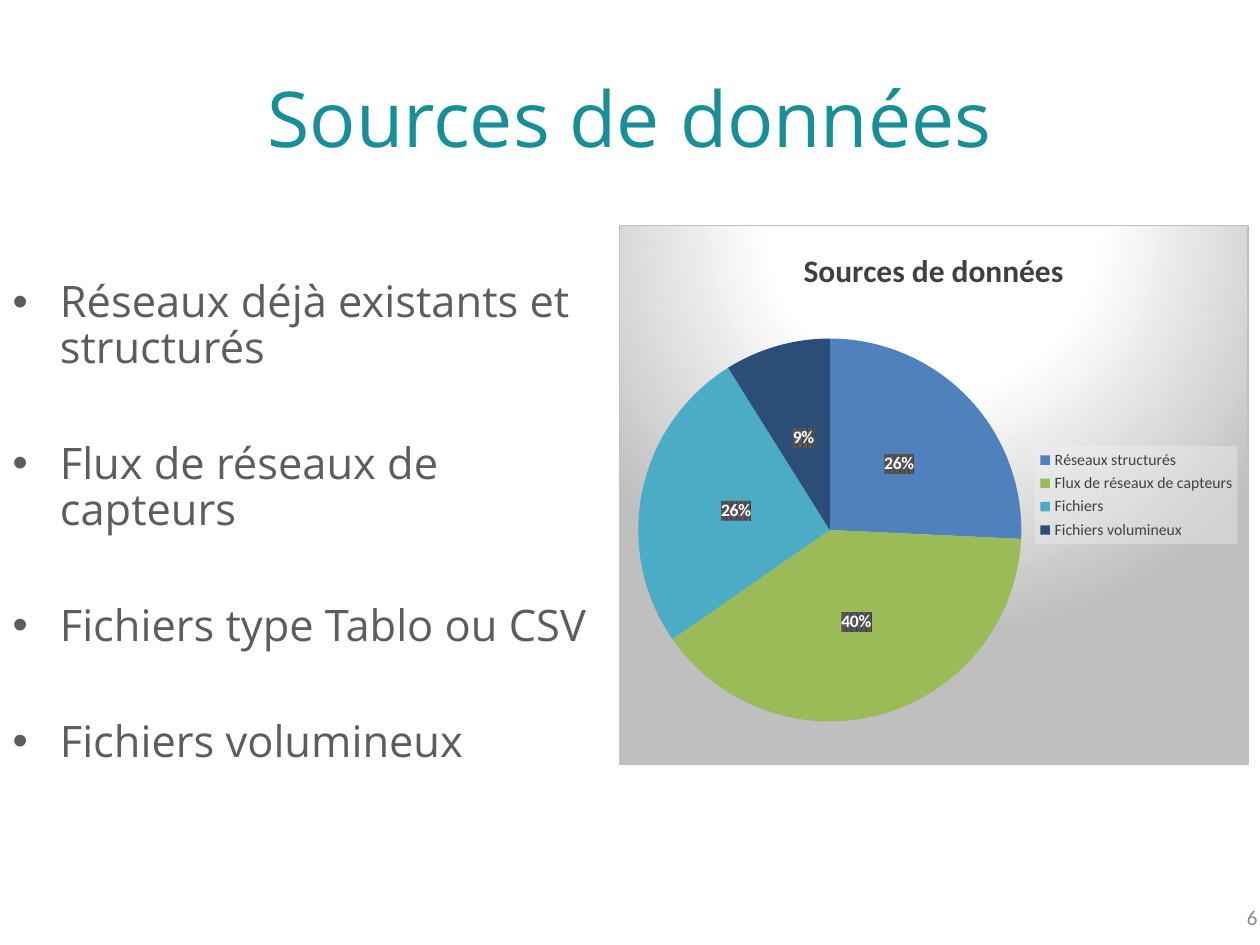
from lxml import etree
from pptx import Presentation
from pptx.chart.data import CategoryChartData
from pptx.dml.color import RGBColor
from pptx.enum.chart import XL_CHART_TYPE, XL_LABEL_POSITION, XL_LEGEND_POSITION
from pptx.enum.text import MSO_ANCHOR, MSO_AUTO_SIZE, PP_ALIGN
from pptx.oxml import parse_xml
from pptx.oxml.ns import nsdecls, qn
from pptx.util import Cm, Pt

PIE = XL_CHART_TYPE.PIE
LABEL_CENTER = XL_LABEL_POSITION.CENTER
LEGEND_RIGHT = XL_LEGEND_POSITION.RIGHT
MIDDLE = MSO_ANCHOR.MIDDLE
NO_FIT = MSO_AUTO_SIZE.NONE
CENTER, RIGHT = PP_ALIGN.CENTER, PP_ALIGN.RIGHT


def style(font, name, size, color, bold=False):
    font.name = name
    font.size = Pt(size)
    font.bold = bold
    font.color.rgb = RGBColor.from_string(color)


def add_area_format(chart_part, content):
    """Put fill and line properties just before the part's text properties."""
    area = parse_xml(f'<c:spPr {nsdecls("c", "a")}>{content}</c:spPr>')
    chart_part.find(qn("c:txPr")).addprevious(area)


prs = Presentation()
prs.slide_width, prs.slide_height = Cm(25.4), Cm(19.05)
slide = prs.slides.add_slide(prs.slide_layouts[1])
title, sources = slide.placeholders

# Title
title.left, title.top, title.width, title.height = Cm(1.27), Cm(0.76), Cm(22.86), Cm(3.18)
title.text_frame.vertical_anchor = MIDDLE
heading = title.text_frame.paragraphs[0]
heading.alignment = CENTER
heading_run = heading.add_run()
heading_run.text = "Sources de données"
style(heading_run.font, "Open Sans", 44, "178F96")

# List of sources
sources.left, sources.top, sources.width, sources.height = Cm(0), Cm(5.44), Cm(12.29), Cm(9.07)
sources_text = sources.text_frame
sources_text.auto_size = NO_FIT
sources_text.margin_top = Cm(0.23)
source_names = [
    "Réseaux déjà existants et structurés",
    "Flux de réseaux de capteurs",
    "Fichiers type Tablo ou CSV",
    "Fichiers volumineux",
]
for i, source_name in enumerate(source_names):
    item = sources_text.paragraphs[0] if i == 0 else sources_text.add_paragraph()
    item.line_spacing = 0.88
    item.space_before = Pt(40 if i else 0)
    item_run = item.add_run()
    item_run.text = source_name
    style(item_run.font, "Open Sans", 24.8, "5E5C5C")

# Pie chart of the shares
shares = [
    ("Réseaux structurés", 26, "4F81BD"),
    ("Flux de réseaux de capteurs", 40, "9BBB59"),
    ("Fichiers", 26, "4BACC6"),
    ("Fichiers volumineux", 9, "2C4D75"),
]
share_data = CategoryChartData()
share_data.categories = [category for category, _, _ in shares]
share_data.add_series("Series 1", [value for _, value, _ in shares])
chart = slide.shapes.add_chart(
    PIE, Cm(12.47), Cm(4.53), Cm(12.7), Cm(10.9), share_data
).chart
style(chart.font, "Calibri", 10, "000000")
add_area_format(
    chart.element if hasattr(chart, "element") else chart._chartSpace,
    '<a:gradFill><a:gsLst>'
    '<a:gs pos="0"><a:srgbClr val="FFFFFF"/></a:gs>'
    '<a:gs pos="39000"><a:srgbClr val="FFFFFF"/></a:gs>'
    '<a:gs pos="100000"><a:srgbClr val="BFBFBF"/></a:gs></a:gsLst>'
    '<a:path path="circle"><a:fillToRect l="50000" t="-80000" r="50000" b="180000"/></a:path>'
    '</a:gradFill><a:ln w="9525"><a:solidFill><a:srgbClr val="BFBFBF"/></a:solidFill></a:ln>',
)

chart.has_title = True
chart_heading_run = chart.chart_title.text_frame.paragraphs[0].add_run()
chart_heading_run.text = "Sources de données"
style(chart_heading_run.font, "Calibri", 18, "404040", bold=True)

# Slices and their labels
plot = chart.plots[0]
plot.vary_by_categories = True
series = plot.series[0]
for i, (_, _, color) in enumerate(shares):
    slice_fill = series.points[i].format.fill
    slice_fill.solid()
    slice_fill.fore_color.rgb = RGBColor.from_string(color)
labels = series.data_labels
labels.show_percentage = True
labels.show_value = False
labels.number_format = "0%"
labels.number_format_is_linked = False
labels.position = LABEL_CENTER
style(labels.font, "Calibri", 10, "FFFFFF", bold=True)
add_area_format(
    labels._element,
    '<a:pattFill prst="pct75"><a:fgClr><a:srgbClr val="404040"/></a:fgClr>'
    '<a:bgClr><a:srgbClr val="595959"/></a:bgClr></a:pattFill>',
)

# Legend
chart.has_legend = True
legend = chart.legend
legend.position = LEGEND_RIGHT
legend.include_in_layout = False
style(legend.font, "Calibri", 9, "404040")
add_area_format(
    legend._element,
    '<a:solidFill><a:srgbClr val="F2F2F2"><a:alpha val="39000"/></a:srgbClr></a:solidFill>',
)

# Place of the pie inside the chart, as shares of its size
plot_area = chart._chartSpace.find(".//" + qn("c:plotArea"))
for old_layout in plot_area.findall(qn("c:layout")):
    plot_area.remove(old_layout)
layout = etree.Element(qn("c:layout"))
manual = etree.SubElement(layout, qn("c:manualLayout"))
for tag, value in [("layoutTarget", "inner"), ("xMode", "edge"), ("yMode", "edge"),
                   ("x", "0.03"), ("y", "0.21"), ("w", "0.61"), ("h", "0.71")]:
    etree.SubElement(manual, qn(f"c:{tag}")).set("val", value)
plot_area.insert(0, layout)

# Page number
page_box = slide.shapes.add_textbox(Cm(19.69), Cm(17.98), Cm(5.71), Cm(1.02))
page_text = page_box.text_frame
page_text.word_wrap = True
page_text.vertical_anchor = MIDDLE
# The number sits close to the slide's right edge
page_text.margin_right = Cm(0.05)
page = page_text.paragraphs[0]
page.alignment = RIGHT
page_run = page.add_run()
page_run.text = "6"
style(page_run.font, "Calibri", 12, "8C8C8C")

prs.save("out.pptx")
